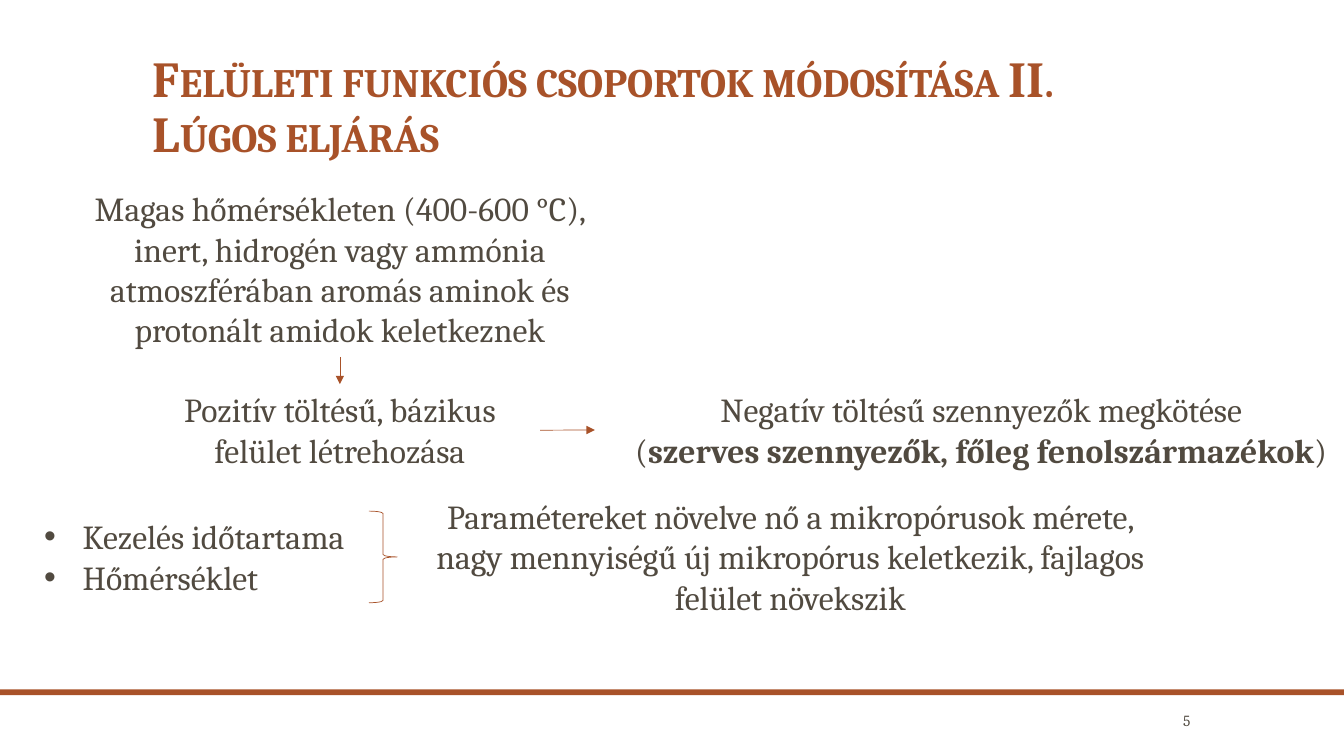
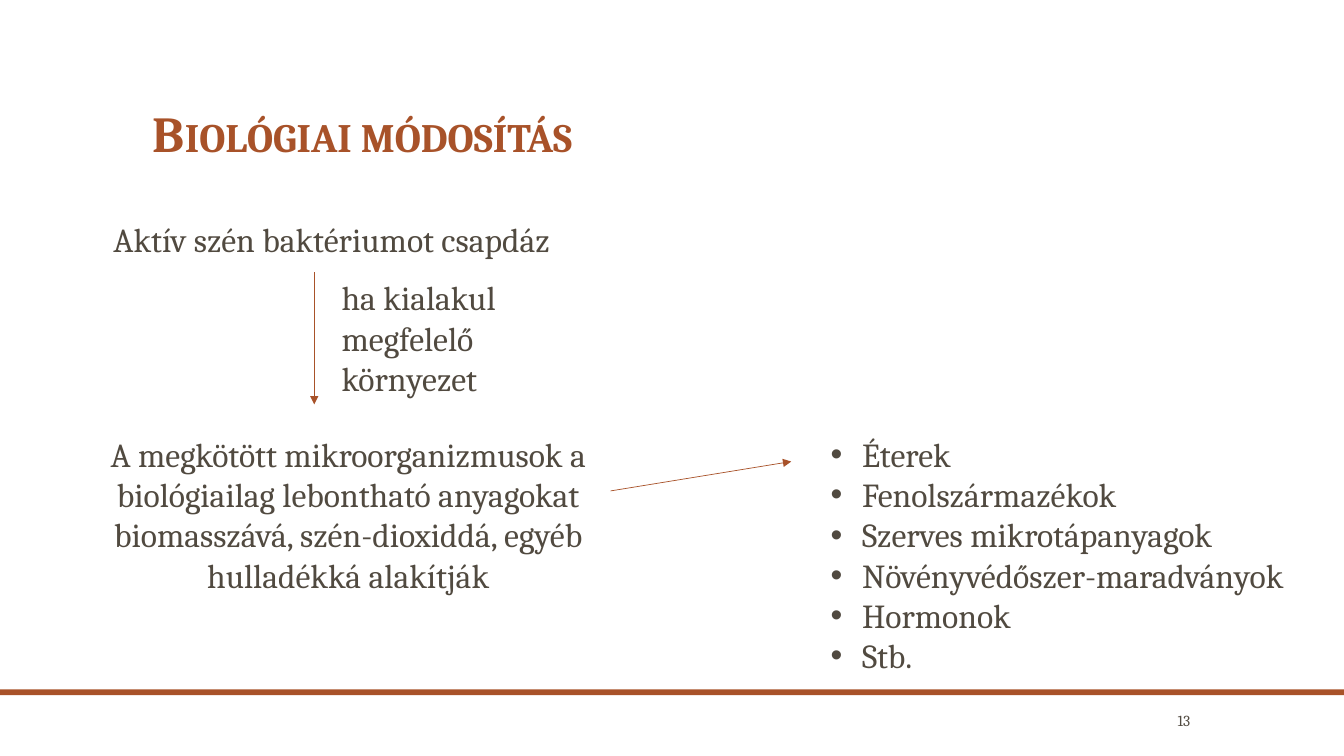
from lxml.etree import SubElement
from pptx import Presentation
from pptx.dml.color import RGBColor
from pptx.enum.shapes import MSO_CONNECTOR, MSO_SHAPE
from pptx.enum.text import MSO_ANCHOR, MSO_AUTO_SIZE, PP_ALIGN
from pptx.oxml.ns import qn
from pptx.util import Cm, Pt

RUST = RGBColor(0xA8, 0x52, 0x29)
BROWN = RGBColor(0x51, 0x4A, 0x40)
FONT = "Cambria"
BODY_SIZE = 24
LINE_WIDTH = Pt(0.5)
TOP, LEFT, BOTTOM, RIGHT = range(4)


class Deck:
    """Holds the shared style and the slide being built."""

    def __init__(self):
        self.presentation = Presentation()
        self.presentation.slide_width = Cm(33.87)
        self.presentation.slide_height = Cm(19.05)
        self.layout = self.presentation.slide_layouts[1]
        self.slide = None

    def new_slide(self, title, number):
        first = self.slide is None
        self.slide = self.presentation.slides.add_slide(self.layout)
        if first:
            self.add_band_to_layout()
        self.title(title)
        self.text(str(number), 28.32, 17.83, 1.93, 0.66, size=11,
                  align=PP_ALIGN.RIGHT, anchor=MSO_ANCHOR.MIDDLE,
                  auto_size=MSO_AUTO_SIZE.NONE)

    def add_band_to_layout(self):
        band = self.slide.shapes.add_shape(
            MSO_SHAPE.RECTANGLE, 0, Cm(17.37), self.presentation.slide_width, Cm(0.15))
        band.shadow.inherit = False
        band.fill.solid()
        band.fill.fore_color.rgb = RUST
        band.line.fill.background()
        band.element.nvSpPr.cNvPr.set("id", "100")
        self.layout.shapes.element.append(band.element)

    def place(self, shape, left, top, width, height):
        shape.left, shape.top = Cm(left), Cm(top)
        shape.width, shape.height = Cm(width), Cm(height)

    def add_runs(self, paragraph, text, size=BODY_SIZE, color=BROWN, bold=False):
        """Add one run per line of the text, with line breaks between."""
        runs = []
        for index, line in enumerate(text.split("\n")):
            if index:
                paragraph.add_line_break()
            if not line:
                continue
            run = paragraph.add_run()
            run.text = line
            run.font.name = FONT
            run.font.size = Pt(size)
            run.font.bold = bold
            run.font.color.rgb = color
            runs.append(run)
        return runs

    def title(self, text):
        title = self.slide.shapes.title
        self.place(title, 3.6, 1.07, 26.67, 3.17)
        frame = title.text_frame
        frame.auto_size = MSO_AUTO_SIZE.NONE
        frame.vertical_anchor = MSO_ANCHOR.BOTTOM
        paragraph = frame.paragraphs[0]
        paragraph.alignment = PP_ALIGN.LEFT
        paragraph.line_spacing = 0.9
        for run in self.add_runs(paragraph, text, 36, RUST, bold=True):
            run._r.get_or_add_rPr().set("cap", "small")

    def text(self, content, left, top, width, height, size=BODY_SIZE,
             align=PP_ALIGN.CENTER, anchor=MSO_ANCHOR.TOP,
             auto_size=MSO_AUTO_SIZE.SHAPE_TO_FIT_TEXT):
        """Content is a string, or a list of (string, bold) pairs."""
        box = self.slide.shapes.add_textbox(Cm(left), Cm(top), Cm(width), Cm(height))
        frame = box.text_frame
        frame.word_wrap = True
        frame.auto_size = auto_size
        frame.vertical_anchor = anchor
        paragraph = frame.paragraphs[0]
        paragraph.alignment = align
        parts = [(content, False)] if isinstance(content, str) else content
        for part, bold in parts:
            self.add_runs(paragraph, part, size, bold=bold)
        return box

    def bullets(self, items, left, top, width, height, indent):
        body = self.slide.placeholders[1]
        self.place(body, left, top, width, height)
        frame = body.text_frame
        frame.auto_size = MSO_AUTO_SIZE.NONE
        for index, item in enumerate(items):
            paragraph = frame.add_paragraph() if index else frame.paragraphs[0]
            properties = paragraph._p.get_or_add_pPr()
            properties.set("marL", str(Cm(indent)))
            properties.set("indent", str(-Cm(indent)))
            SubElement(properties, qn("a:buFont")).set("typeface", "Arial")
            SubElement(properties, qn("a:buChar")).set("char", "•")
            paragraph.space_before = Pt(0)
            self.add_runs(paragraph, item)

    def arrow(self, start, end, begin_join=None, end_join=None):
        """Draw an arrow; a join is a (shape, side) pair."""
        arrow = self.slide.shapes.add_connector(
            MSO_CONNECTOR.STRAIGHT, *(Cm(value) for value in start + end))
        if begin_join:
            arrow.begin_connect(*begin_join)
        if end_join:
            arrow.end_connect(*end_join)
        arrow.line.color.rgb = RUST
        arrow.line.width = LINE_WIDTH
        properties = arrow.element.spPr
        SubElement(properties.find(qn("a:ln")), qn("a:tailEnd")).set("type", "triangle")
        SubElement(properties, qn("a:effectLst"))

    def brace(self, left, top, width, height):
        brace = self.slide.shapes.add_shape(
            MSO_SHAPE.RIGHT_BRACE, Cm(left), Cm(top), Cm(width), Cm(height))
        brace.shadow.inherit = False
        brace.fill.background()
        brace.line.color.rgb = RUST
        brace.line.width = LINE_WIDTH


def add_alkaline_slide(deck):
    deck.new_slide("Felületi funkciós csoportok módosítása II.\nLúgos eljárás", 5)

    # Process steps
    treatment = deck.text(
        "Magas hőmérsékleten (400-600 °C), inert, hidrogén vagy ammónia "
        "atmoszférában aromás aminok és protonált amidok keletkeznek",
        1.73, 4.62, 13.67, 4.37)
    surface = deck.text("Pozitív töltésű, bázikus\nfelület létrehozása",
                        2.14, 9.68, 12.85, 2.31)
    deck.text([("Negatív töltésű szennyezők megkötése\n(", False),
               ("szerves szennyezők, főleg fenolszármazékok", True),
               (")", False)], 15.39, 9.68, 18.67, 2.31)
    deck.arrow((8.56, 8.99), (8.56, 9.68), (treatment, BOTTOM), (surface, TOP))
    deck.arrow((13.61, 10.84), (14.99, 10.84), end_join=(surface, RIGHT))

    # Parameters and their effect
    deck.bullets(["Kezelés időtartama", "Hőmérséklet"], 0.86, 12.88, 9.53, 2.31, 0.97)
    deck.brace(9.3, 12.88, 0.71, 2.31)
    deck.text("Paramétereket növelve nő a mikropórusok mérete, nagy mennyiségű új "
              "mikropórus keletkezik, fajlagos felület növekszik",
              10.39, 12.37, 19.05, 3.33)


def add_biological_slide(deck):
    deck.new_slide("Biológiai módosítás", 13)

    # Process steps
    deck.text("Aktív szén baktériumot csapdáz", 1.93, 5.38, 12.85, 1.27)
    deck.arrow((7.92, 6.86), (7.92, 10.19))
    deck.text("ha kialakul megfelelő környezet", 8.36, 6.86, 5.05, 3.33,
              align=PP_ALIGN.LEFT)
    deck.text("A megkötött mikroorganizmusok a biológiailag lebontható anyagokat "
              "biomasszává, szén-dioxiddá, egyéb hulladékká alakítják",
              0.61, 10.8, 16.33, 4.37)

    # Degraded materials
    deck.arrow((15.39, 12.37), (19.94, 11.63))
    deck.bullets(["Éterek", "Fenolszármazékok", "Szerves mikrotápanyagok",
                  "Növényvédőszer-maradványok", "Hormonok", "Stb."],
                 20.68, 10.8, 13.18, 6.4, 0.79)


def main():
    deck = Deck()
    add_alkaline_slide(deck)
    add_biological_slide(deck)
    deck.presentation.save("out.pptx")


if __name__ == "__main__":
    main()
